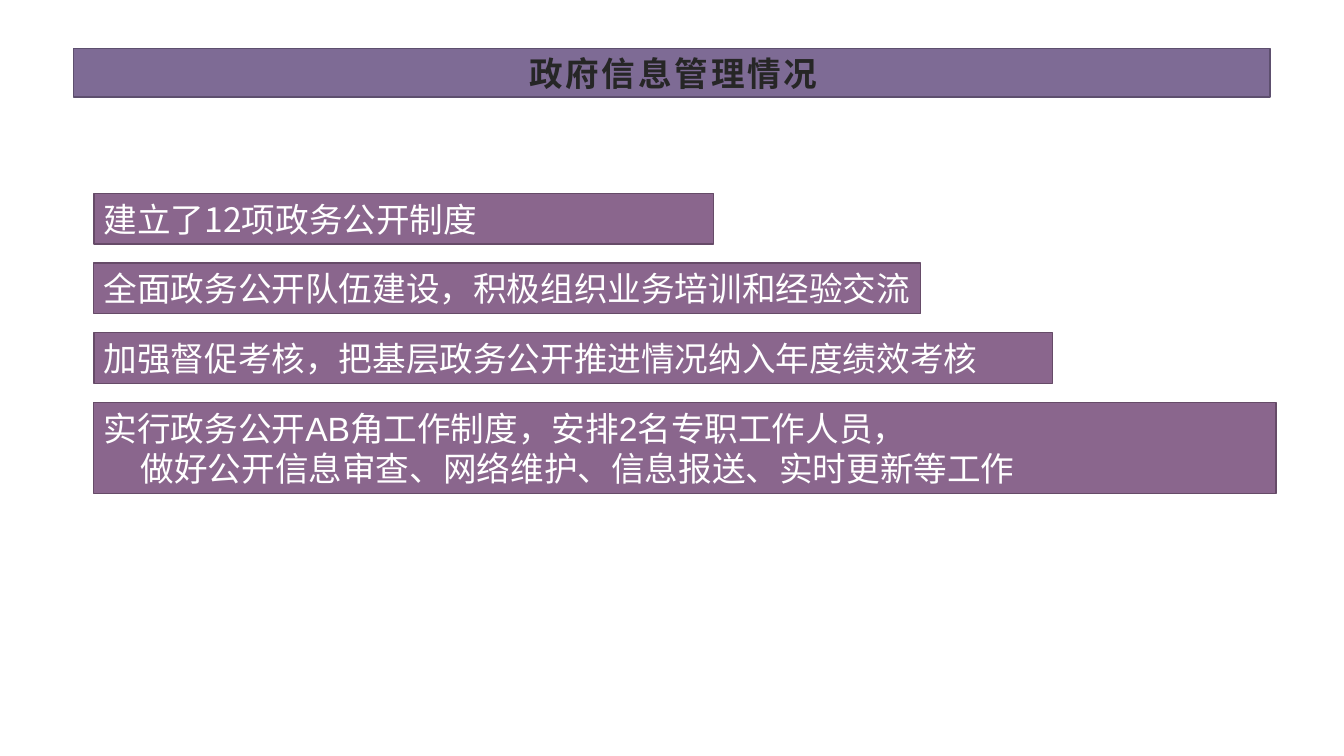
from lxml.etree import SubElement
from pptx import Presentation
from pptx.dml.color import RGBColor
from pptx.enum.shapes import MSO_SHAPE
from pptx.enum.text import MSO_ANCHOR, MSO_AUTO_SIZE, PP_ALIGN
from pptx.oxml.ns import qn
from pptx.util import Pt

TITLE_FILL = RGBColor(0x7E, 0x6B, 0x95)
TITLE_LINE = RGBColor(0x5D, 0x4F, 0x6E)
TITLE_TEXT = RGBColor(0x26, 0x26, 0x26)
BAR_FILL = RGBColor(0x8A, 0x66, 0x8D)
BAR_LINE = RGBColor(0x66, 0x4B, 0x68)
WHITE = RGBColor(0xFF, 0xFF, 0xFF)

LATIN_FONT = "Arial"
CJK_FONT = "Noto Sans CJK SC"

BAR_LEFT, BAR_TOP, BAR_PITCH = 67, 138.2, 49.7
LINE_HEIGHT, BAR_PADDING = 29.2, 7
SECOND_LINE_INDENT = 26.5

# width, font, wrap, lines of text
MEASURES = [
    (442.8, CJK_FONT, True, ["建立了12项政务公开制度"]),
    (590.4, LATIN_FONT, False, ["全面政务公开队伍建设，积极组织业务培训和经验交流"]),
    (684.7, LATIN_FONT, True, ["加强督促考核，把基层政务公开推进情况纳入年度绩效考核"]),
    (844.6, LATIN_FONT, True, ["实行政务公开AB角工作制度，安排2名专职工作人员，",
                               "做好公开信息审查、网络维护、信息报送、实时更新等工作"]),
]


class SlideBuilder:
    def __init__(self, prs):
        self.slide = prs.slides.add_slide(prs.slide_layouts[5])
        self.font = {"size": Pt(24), "name": LATIN_FONT, "bold": False}

    def paint(self, sp, fill, line):
        sp.fill.solid()
        sp.fill.fore_color.rgb = fill
        sp.line.color.rgb = line
        sp.line.width = Pt(1)

    def add_text(self, p, text, color, **changes):
        """Add a formatted run and return its properties element."""
        r = p.add_run()
        r.text = text
        for name, value in {**self.font, **changes}.items():
            setattr(r.font, name, value)
        r.font.color.rgb = color
        rPr = r._r.get_or_add_rPr()
        SubElement(rPr, qn("a:ea"), typeface=CJK_FONT)
        return rPr

    def title(self, text, left, top, width, height):
        sp = self.slide.shapes.title
        box = {"left": left, "top": top, "width": width, "height": height}
        for name, value in box.items():
            setattr(sp, name, Pt(value))
        self.paint(sp, TITLE_FILL, TITLE_LINE)
        tf = sp.text_frame
        frame = {"margin_left": Pt(7.9), "margin_right": Pt(5.8),
                 "margin_top": Pt(2.9), "margin_bottom": Pt(2.9),
                 "vertical_anchor": MSO_ANCHOR.MIDDLE,
                 "auto_size": MSO_AUTO_SIZE.NONE, "word_wrap": True}
        for name, value in frame.items():
            setattr(tf, name, value)
        p = tf.paragraphs[0]
        p.alignment = PP_ALIGN.CENTER
        self.add_text(p, text, TITLE_TEXT, bold=True).set("spc", "200")

    def bar(self, lines, left, top, width, font, wrap):
        height = LINE_HEIGHT * len(lines) + BAR_PADDING
        sp = self.slide.shapes.add_shape(
            MSO_SHAPE.RECTANGLE, Pt(left), Pt(top), Pt(width), Pt(height))
        sp.shadow.inherit = False
        self.paint(sp, BAR_FILL, BAR_LINE)
        tf = sp.text_frame
        tf.word_wrap = wrap
        tf.auto_size = MSO_AUTO_SIZE.SHAPE_TO_FIT_TEXT
        for i, text in enumerate(lines):
            p = tf.add_paragraph() if i else tf.paragraphs[0]
            p.alignment = PP_ALIGN.LEFT
            if i:
                p._p.get_or_add_pPr().set("marL", str(Pt(SECOND_LINE_INDENT)))
            self.add_text(p, text, WHITE, name=font)


def main():
    prs = Presentation()
    prs.slide_width, prs.slide_height = Pt(960), Pt(540)
    s = SlideBuilder(prs)
    s.title("政府信息管理情况", 52.6, 34.6, 854.6, 34.6)
    for i, (width, font, wrap, lines) in enumerate(MEASURES):
        s.bar(lines, BAR_LEFT, BAR_TOP + i * BAR_PITCH, width, font, wrap)
    prs.save("out.pptx")


if __name__ == "__main__":
    main()
